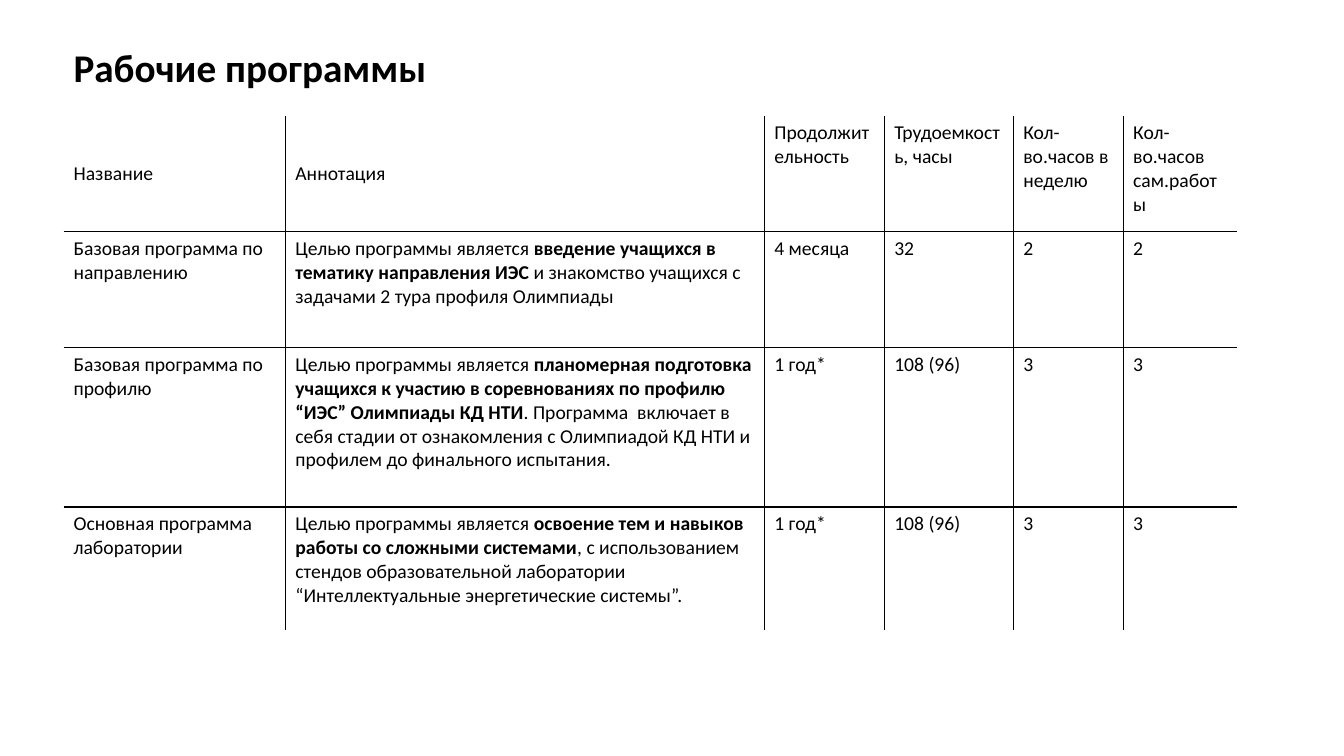
"""Build a slide with a table of the work programmes."""
from lxml.etree import SubElement
from pptx import Presentation
from pptx.dml.color import RGBColor
from pptx.enum.text import MSO_ANCHOR, MSO_AUTO_SIZE, PP_ALIGN
from pptx.oxml.ns import qn
from pptx.util import Inches, Pt

COLORS = {"text": "000000", "border": "000000", "background": "FFFFFF"}
TITLE_FORMAT = {"name": "Calibri", "size": Pt(28), "bold": True}
CELL_FORMAT = {"name": "Calibri", "size": Pt(14)}
COLUMN_WIDTHS = [2.2, 4.75, 1.19, 1.28, 1.09, 1.13]
ROW_HEIGHTS = [1.15, 1.15, 1.58, 1.22]
BOLD_MARK = "|"
PROGRAMMES = [
    ["Название", "Аннотация", "Продолжительность", "Трудоемкость, часы",
     "Кол-во.часов в неделю", "Кол-во.часов сам.работы"],
    ["Базовая программа по направлению",
     "Целью программы является |введение учащихся в тематику направления ИЭС| "
     "и знакомство учащихся с задачами 2 тура профиля Олимпиады",
     "4 месяца", "32", "2", "2"],
    ["Базовая программа по профилю",
     "Целью программы является |планомерная подготовка учащихся к участию в "
     "соревнованиях по профилю “ИЭС” Олимпиады КД НТИ|. Программа  включает в себя "
     "стадии от ознакомления с Олимпиадой КД НТИ и профилем до финального испытания.",
     "1 год*", "108 (96)", "3", "3"],
    ["Основная программа лаборатории",
     "Целью программы является |освоение тем и навыков работы со сложными системами|, "
     "с использованием стендов образовательной лаборатории "
     "“Интеллектуальные энергетические системы”.",
     "1 год*", "108 (96)", "3", "3"],
]


def add_span(para, text, formats):
    span = para.add_run()
    span.text = text
    for name, value in formats.items():
        setattr(span.font, name, value)
    span.font.color.rgb = RGBColor.from_string(COLORS["text"])


def add_border(cell, side, visible):
    line = SubElement(cell._tc.get_or_add_tcPr(), qn(f"a:{side}"), w=str(Pt(1)))
    if visible:
        fill = SubElement(line, qn("a:solidFill"))
        SubElement(fill, qn("a:srgbClr"), val=COLORS["border"])
    else:
        SubElement(line, qn("a:noFill"))


deck = Presentation()
deck.slide_width = Inches(13.33)
deck.slide_height = Inches(7.5)
page = deck.slides.add_slide(deck.slide_layouts[5])
page.background.fill.solid()
page.background.fill.fore_color.rgb = RGBColor.from_string(COLORS["background"])

title = page.shapes.title
title.left, title.top = Inches(0.63), Inches(0.38)
title.width, title.height = Inches(3.74), Inches(0.57)
title.text_frame.word_wrap = False
title.text_frame.auto_size = MSO_AUTO_SIZE.SHAPE_TO_FIT_TEXT
title.text_frame.vertical_anchor = MSO_ANCHOR.TOP
title_para = title.text_frame.paragraphs[0]
title_para.alignment = PP_ALIGN.LEFT
add_span(title_para, "Рабочие программы", TITLE_FORMAT)

row_count, column_count = len(ROW_HEIGHTS), len(COLUMN_WIDTHS)
table = page.shapes.add_table(
    row_count, column_count, Inches(0.63), Inches(1.15),
    Inches(sum(COLUMN_WIDTHS)), Inches(sum(ROW_HEIGHTS))).table
table.first_row = False
table.horz_banding = False
for column, width in zip(table.columns, COLUMN_WIDTHS):
    column.width = Inches(width)
for row, height in zip(table.rows, ROW_HEIGHTS):
    row.height = Inches(height)

for row_index, programme in enumerate(PROGRAMMES):
    for column_index, text in enumerate(programme):
        cell = table.cell(row_index, column_index)
        centred = row_index == 0 and column_index < 2
        cell.vertical_anchor = MSO_ANCHOR.MIDDLE if centred else MSO_ANCHOR.TOP
        inner_sides = {
            "lnL": column_index > 0,
            "lnR": column_index < column_count - 1,
            "lnT": row_index > 0,
            "lnB": row_index < row_count - 1,
        }
        for side, visible in inner_sides.items():
            add_border(cell, side, visible)
        cell.fill.background()
        para = cell.text_frame.paragraphs[0]
        for part_index, part in enumerate(text.split(BOLD_MARK)):
            add_span(para, part, {**CELL_FORMAT, "bold": part_index % 2 == 1})

deck.save("out.pptx")
